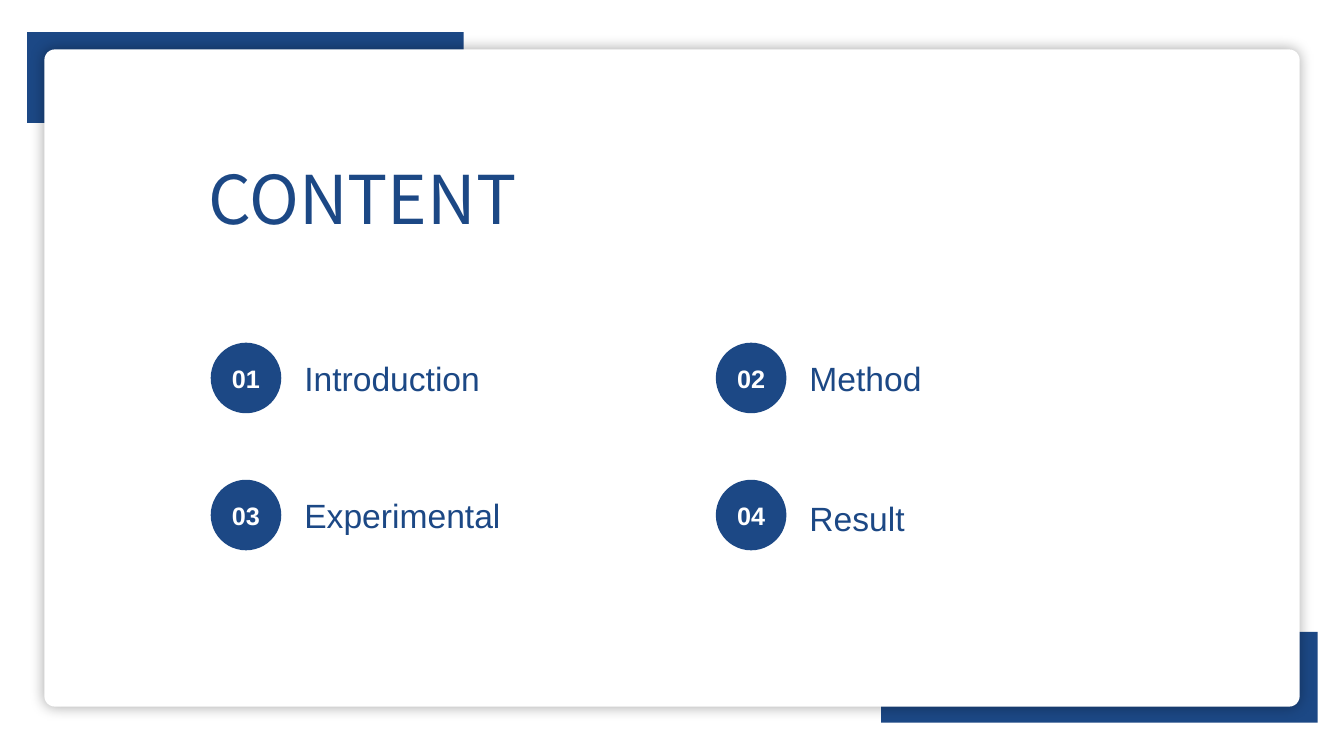
from lxml.etree import SubElement
from pptx import Presentation
from pptx.dml.color import RGBColor
from pptx.enum.shapes import MSO_SHAPE
from pptx.enum.text import MSO_ANCHOR, MSO_AUTO_SIZE, PP_ALIGN
from pptx.oxml.ns import qn
from pptx.util import Inches, Pt

COLORS = {"navy": "1C4885", "white": "FFFFFF", "shadow": "000000"}


def color(name):
    return RGBColor.from_string(COLORS[name])


def write(frame, text, size, font="Arial", ink="navy", bold=False, align=PP_ALIGN.LEFT):
    paragraph = frame.paragraphs[0]
    paragraph.alignment = align
    run = paragraph.add_run()
    run.text = text
    run.font.name = font
    run.font.size = Pt(size)
    run.font.bold = bold
    run.font.color.rgb = color(ink)


def add_block(slide, preset, left, top, width, height, fill):
    block = slide.shapes.add_shape(
        preset, Inches(left), Inches(top), Inches(width), Inches(height))
    block.shadow.inherit = False
    block.fill.solid()
    block.fill.fore_color.rgb = color(fill)
    block.line.fill.background()
    return block


def add_label(slide, text, left, top, width, height, **style):
    label = slide.shapes.add_textbox(
        Inches(left), Inches(top), Inches(width), Inches(height))
    label.text_frame.word_wrap = True
    label.text_frame.auto_size = MSO_AUTO_SIZE.SHAPE_TO_FIT_TEXT
    write(label.text_frame, text, **style)


def add_card(slide):
    card = add_block(slide, MSO_SHAPE.ROUNDED_RECTANGLE, 0.44, 0.49, 12.45, 6.52, "white")
    card.adjustments[0] = 0.016
    effects = card._element.spPr.find(qn("a:effectLst"))
    glow = SubElement(effects, qn("a:outerShdw"), blurRad=str(Inches(0.14)),
                      dist="0", algn="ctr", rotWithShape="0")
    tint = SubElement(glow, qn("a:srgbClr"), val=COLORS["shadow"])
    SubElement(tint, qn("a:alpha"), val="35000")


def add_badge(slide, number, left, top):
    badge = add_block(slide, MSO_SHAPE.OVAL, left, top, 0.7, 0.7, "navy")
    frame = badge.text_frame
    frame.margin_left = frame.margin_right = frame.margin_top = frame.margin_bottom = 0
    frame.word_wrap = False
    frame.vertical_anchor = MSO_ANCHOR.MIDDLE
    write(frame, f"{number:02d}", 18, ink="white", bold=True, align=PP_ALIGN.CENTER)


def main():
    deck = Presentation()
    deck.slide_width, deck.slide_height = Inches(13.33), Inches(7.5)
    slide = deck.slides.add_slide(deck.slide_layouts[6])

    for left, top in ((8.74, 6.27), (0.27, 0.32)):
        add_block(slide, MSO_SHAPE.RECTANGLE, left, top, 4.33, 0.9, "navy")
    add_card(slide)
    add_label(slide, "CONTENT", 1.97, 1.51, 3.45, 0.91, size=48,
              font="Noto Sans CJK SC", align=PP_ALIGN.JUSTIFY)

    sections = (("Introduction", 0.1), ("Method", 0.1),
                ("Experimental", 0.1), ("Result", 0.13))
    for index, (section, drop) in enumerate(sections):
        row, column = divmod(index, 2)
        left, top = 2.09 + 5.01 * column, 3.4 + 1.36 * row
        add_badge(slide, index + 1, left, top)
        add_label(slide, section, left + 0.83, top + drop, 4.05, 0.5, size=24,
                  align=PP_ALIGN.JUSTIFY if index == 0 else PP_ALIGN.LEFT)

    deck.save("out.pptx")


if __name__ == "__main__":
    main()
